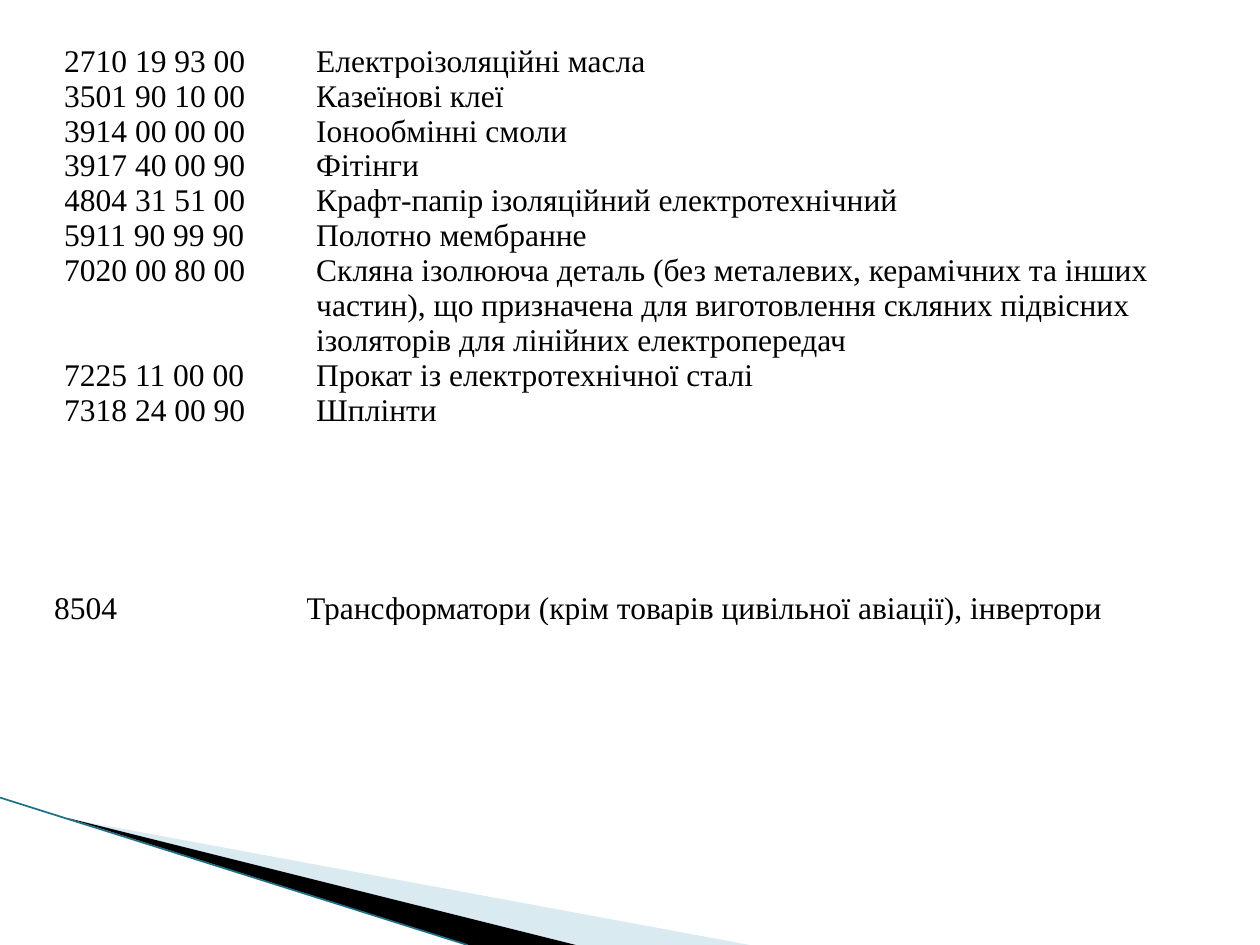
from dataclasses import dataclass

from lxml.etree import SubElement
from pptx import Presentation
from pptx.dml.color import RGBColor
from pptx.enum.shapes import MSO_CONNECTOR
from pptx.oxml.ns import qn
from pptx.util import Inches, Pt


@dataclass(frozen=True)
class Theme:
    font: str = "Times New Roman"
    text_size: float = 18
    border_width: float = 0.75
    accent_width: float = 0.95
    text: str = "000000"
    paper: str = "FFFFFF"
    pale_wedge: str = "A0CBDC"
    dark_wedge: str = "000000"
    accent_line: str = "1B6F86"


theme = Theme()

presentation = Presentation()
presentation.slide_width = Inches(10)
presentation.slide_height = Inches(7.5)
slide = presentation.slides.add_slide(presentation.slide_layouts[6])


def add_wedge(points, color):
    corners = [(Inches(x), Inches(y)) for x, y in points]
    builder = slide.shapes.build_freeform(*corners[0])
    builder.add_line_segments(corners[1:], close=True)
    shape = builder.convert_to_shape()
    shape.shadow.inherit = False
    shape.fill.solid()
    shape.fill.fore_color.rgb = RGBColor.from_string(color)
    shape.line.fill.background()
    return shape


def format_cell(cell, text):
    cell.margin_left = cell.margin_right = cell.margin_top = cell.margin_bottom = 0
    cell.text_frame.text = text
    font = cell.text_frame.paragraphs[0].runs[0].font
    font.name = theme.font
    font.size = Pt(theme.text_size)
    font.color.rgb = RGBColor.from_string(theme.text)
    # Borders come before the fill in the cell properties
    properties = cell._tc.get_or_add_tcPr()
    for side in ("a:lnL", "a:lnR", "a:lnT", "a:lnB"):
        border = SubElement(properties, qn(side), w=str(Pt(theme.border_width)))
        fill = SubElement(border, qn("a:solidFill"))
        SubElement(fill, qn("a:srgbClr"), val=theme.paper)
    cell.fill.solid()
    cell.fill.fore_color.rgb = RGBColor.from_string(theme.paper)


# Corner decoration
pale_wedge = add_wedge([(0.55, 6.5), (5.95, 7.5), (4.56, 7.5)], theme.pale_wedge)
pale_color = pale_wedge._element.spPr.find(f"{qn('a:solidFill')}/{qn('a:srgbClr')}")
SubElement(pale_color, qn("a:alpha"), val="40000")
add_wedge([(0.53, 6.49), (4.57, 7.5), (3.72, 7.5)], theme.dark_wedge)

accent_line = slide.shapes.add_connector(
    MSO_CONNECTOR.STRAIGHT, Inches(0), Inches(6.33), Inches(3.71), Inches(7.5)
)
accent_line.line.color.rgb = RGBColor.from_string(theme.accent_line)
accent_line.line.width = Pt(theme.accent_width)
SubElement(accent_line._element.spPr, qn("a:effectLst"))

# Commodity codes: left, top, then rows of code, name and number of lines
materials = [
    ("2710 19 93 00", "Електроізоляційні масла", 1),
    ("3501 90 10 00", "Казеїнові клеї", 1),
    ("3914 00 00 00", "Іонообмінні смоли", 1),
    ("3917 40 00 90", "Фітінги", 1),
    ("4804 31 51 00", "Крафт-папір ізоляційний електротехнічний", 1),
    ("5911 90 99 90", "Полотно мембранне", 1),
    ("7020 00 80 00", "Скляна ізолююча деталь (без металевих, керамічних та інших "
     "частин), що призначена для виготовлення скляних підвісних "
     "ізоляторів для лінійних електропередач", 3),
    ("7225 11 00 00", "Прокат із електротехнічної сталі", 1),
    ("7318 24 00 90", "Шплінти", 1),
]
transformers = [("8504", "Трансформатори (крім товарів цивільної авіації), інвертори", 1)]
column_widths = (2, 7)
line_height = 0.27

for left, top, rows in ((0.51, 0.35, materials), (0.43, 4.69, transformers)):
    height = line_height * sum(lines for _, _, lines in rows)
    table = slide.shapes.add_table(
        len(rows), len(column_widths), Inches(left), Inches(top),
        Inches(sum(column_widths)), Inches(height),
    ).table
    table.first_row = table.horz_banding = False
    for column, width in zip(table.columns, column_widths):
        column.width = Inches(width)
    for row, (code, name, lines) in zip(table.rows, rows):
        row.height = Inches(line_height * lines)
        for cell, text in zip(row.cells, (code, name)):
            format_cell(cell, text)

presentation.save("out.pptx")
